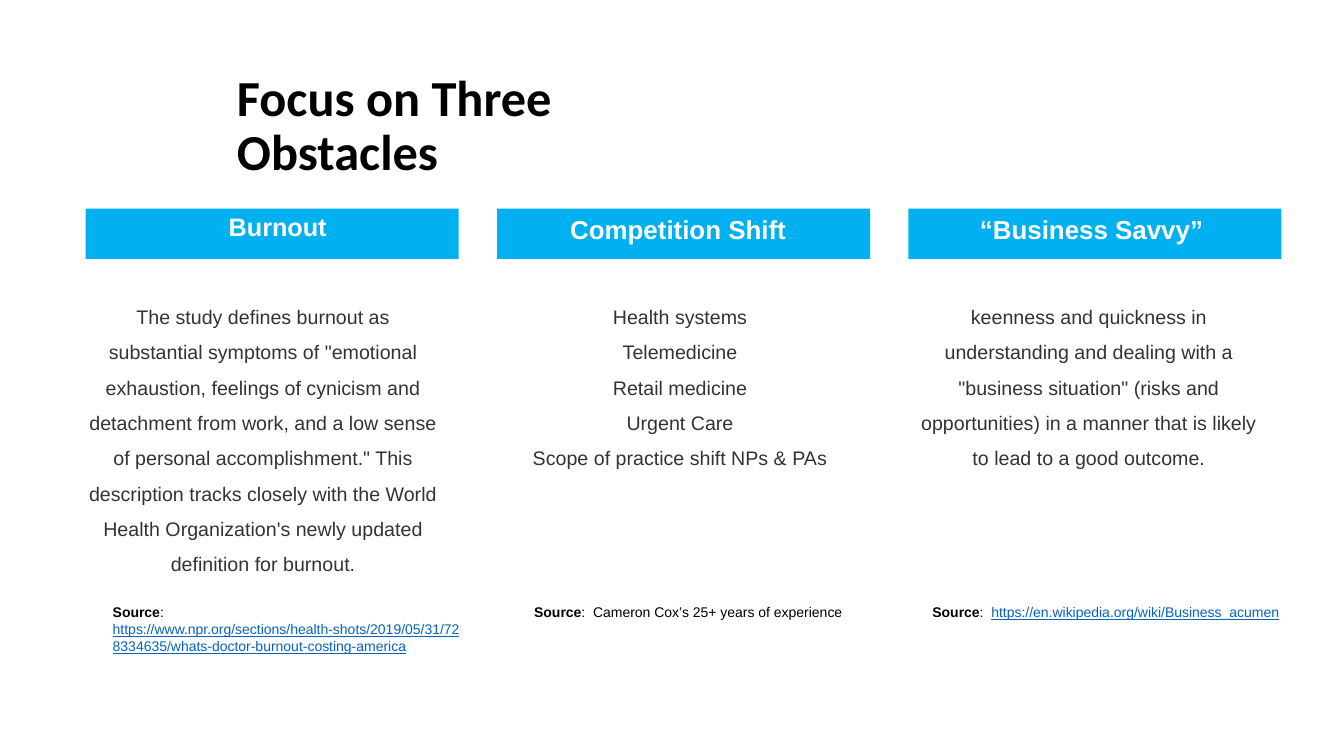
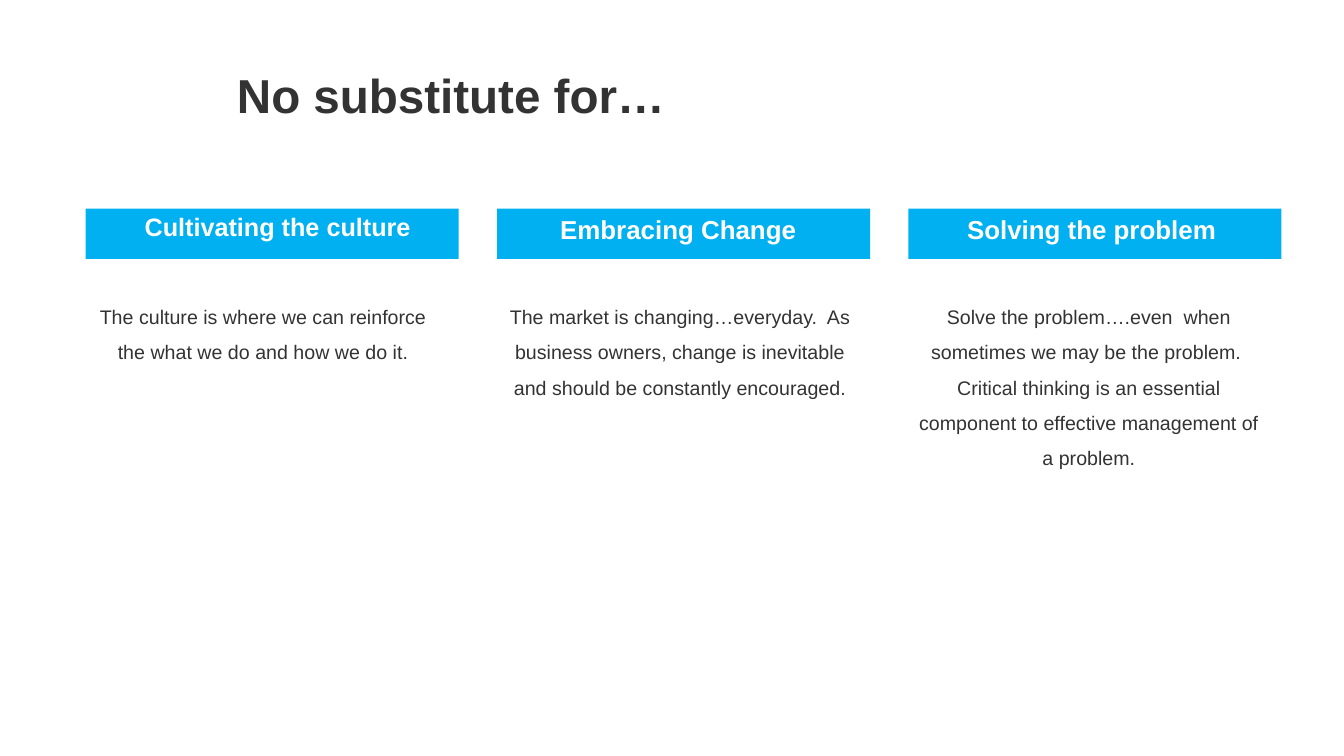
"""Build two slides that each compare three topics in columns."""
import collections

import pptx
import pptx.dml.color
import pptx.enum.shapes
import pptx.enum.text
import pptx.util

SCALE = 9144
ALIGN = pptx.enum.text.PP_ALIGN
ANCHOR = pptx.enum.text.MSO_ANCHOR
FIT = pptx.enum.text.MSO_AUTO_SIZE

Column = collections.namedtuple("Column", "header_box header_size header_spacing body_box")
COLUMNS = [
    Column((115, 202, 310, 48), 18, 0.9, (76, 286, 370, 238)),
    Column((512, 207, 310, 48), 18.5, 0.7, (494, 286, 361, 238)),
    Column((922, 207, 310, 48), 18.5, 0.7, (895, 286, 370, 331)),
]


def px(length):
    return pptx.util.Emu(length * SCALE)


def color(value):
    return pptx.dml.color.RGBColor.from_string(value)


class Deck:
    FONT = "Arial"
    BLACK = "000000"
    GRAY = "333333"
    WHITE = "FFFFFF"
    BLUE = "00B0F0"
    LINK = "0563C1"
    BAR_LEFT, BAR_TOP, BAR_WIDTH, BAR_HEIGHT = 85, 207, 370, 50
    BAR_STEP = 408

    def __init__(self):
        self.deck = pptx.Presentation()
        self.deck.slide_width, self.deck.slide_height = px(1333), px(750)
        self.page = None

    def place(self, shape, box):
        shape.left, shape.top, shape.width, shape.height = map(px, box)

    def frame(self, shape, anchor=ANCHOR.TOP, fit=FIT.NONE):
        frame = shape.text_frame
        frame.word_wrap = True
        frame.vertical_anchor = anchor
        frame.auto_size = fit
        return frame

    def format(self, para, align, spacing, margin=0):
        para.alignment = align
        para.line_spacing = spacing
        para.space_before = pptx.util.Pt(0)
        properties = para._p.get_or_add_pPr()
        properties.set("marL", str(px(margin)))
        properties.set("indent", "0")

    def span(self, para, text, size, ink, bold=False, font=FONT, underline=False):
        span = para.add_run()
        span.text = text
        span.font.name = font
        span.font.size = pptx.util.Pt(size)
        span.font.bold = bold
        span.font.underline = underline
        span.font.color.rgb = color(ink)

    def add_page(self, title, size, ink, font=FONT):
        self.page = self.deck.slides.add_slide(self.deck.slide_layouts.get_by_name("Comparison"))
        shape = self.page.shapes.title
        self.place(shape, (225, 67, 535, 69))
        para = self.frame(shape).paragraphs[0]
        self.format(para, ALIGN.LEFT, 0.9)
        self.span(para, title, size, ink, True, font)
        spare = self.page.placeholders[4]
        spare.element.getparent().remove(spare.element)

    def add_body(self, number, lines, box):
        shape = self.page.placeholders[number]
        self.place(shape, box)
        frame = self.frame(shape)
        for index, line in enumerate(lines):
            para = frame.add_paragraph() if index else frame.paragraphs[0]
            self.format(para, ALIGN.CENTER, 1.5)
            properties = para._p.get_or_add_pPr()
            properties.append(properties.makeelement(pptx.oxml.ns.qn("a:buNone"), {}))
            self.span(para, line, 14, self.GRAY)

    def add_bar(self, index):
        left = self.BAR_LEFT + index * self.BAR_STEP
        bar = self.page.shapes.add_shape(
            pptx.enum.shapes.MSO_SHAPE.RECTANGLE,
            *map(px, (left, self.BAR_TOP, self.BAR_WIDTH, self.BAR_HEIGHT)))
        bar.shadow.inherit = False
        bar.fill.solid()
        bar.fill.fore_color.rgb = color(self.BLUE)
        bar.line.fill.background()

    def add_header(self, text, column):
        box = self.page.shapes.add_textbox(*map(px, column.header_box))
        para = self.frame(box, ANCHOR.MIDDLE).paragraphs[0]
        self.format(para, ALIGN.CENTER, column.header_spacing, 11)
        self.span(para, text, column.header_size, self.WHITE, True)

    def add_columns(self, topics):
        for index, (column, (header, lines)) in enumerate(zip(COLUMNS, topics)):
            self.add_body(index + 1, lines, column.body_box)
            self.add_bar(index)
            self.add_header(header, column)

    def add_source(self, box, note="", link=""):
        shape = self.page.shapes.add_textbox(*map(px, box))
        para = self.frame(shape, fit=FIT.SHAPE_TO_FIT_TEXT).paragraphs[0]
        self.span(para, "Source", 10, self.BLACK, True)
        self.span(para, ":  " + note, 10, self.BLACK)
        if link:
            self.span(para, link, 10, self.LINK, underline=True)


def main():
    deck = Deck()

    deck.add_page("Focus on Three Obstacles", 36, Deck.BLACK, "Calibri")
    deck.add_columns([
        ("Burnout", [
            'The study defines burnout as substantial symptoms of "emotional exhaustion, '
            "feelings of cynicism and detachment from work, and a low sense of personal "
            'accomplishment." This description tracks closely with the World Health '
            "Organization's newly updated definition for burnout."]),
        ("Competition Shift", [
            "Health systems", "Telemedicine", "Retail medicine", "Urgent Care",
            "Scope of practice shift NPs & PAs"]),
        ("“Business Savvy”", [
            'keenness and quickness in understanding and dealing with a "business situation" '
            "(risks and opportunities) in a manner that is likely to lead to a good outcome."]),
    ])
    deck.add_source(
        (102, 594, 370, 61),
        link="https://www.npr.org/sections/health-shots/2019/05/31/728334635/"
             "whats-doctor-burnout-costing-america")
    deck.add_source((520, 594, 330, 27), note="Cameron Cox’s 25+ years of experience")
    deck.add_source((915, 594, 370, 27), link="https://en.wikipedia.org/wiki/Business_acumen")

    deck.add_page("No substitute for…", 34, Deck.GRAY)
    deck.add_columns([
        ("Cultivating the culture", [
            "The culture is where we can reinforce the what we do and how we do it."]),
        ("Embracing Change", [
            "The market is changing…everyday.  As business owners, change is inevitable "
            "and should be constantly encouraged."]),
        ("Solving the problem", [
            "Solve the problem….even  when sometimes we may be the problem.  Critical "
            "thinking is an essential component to effective management of a problem."]),
    ])

    deck.deck.save("out.pptx")


if __name__ == "__main__":
    main()
